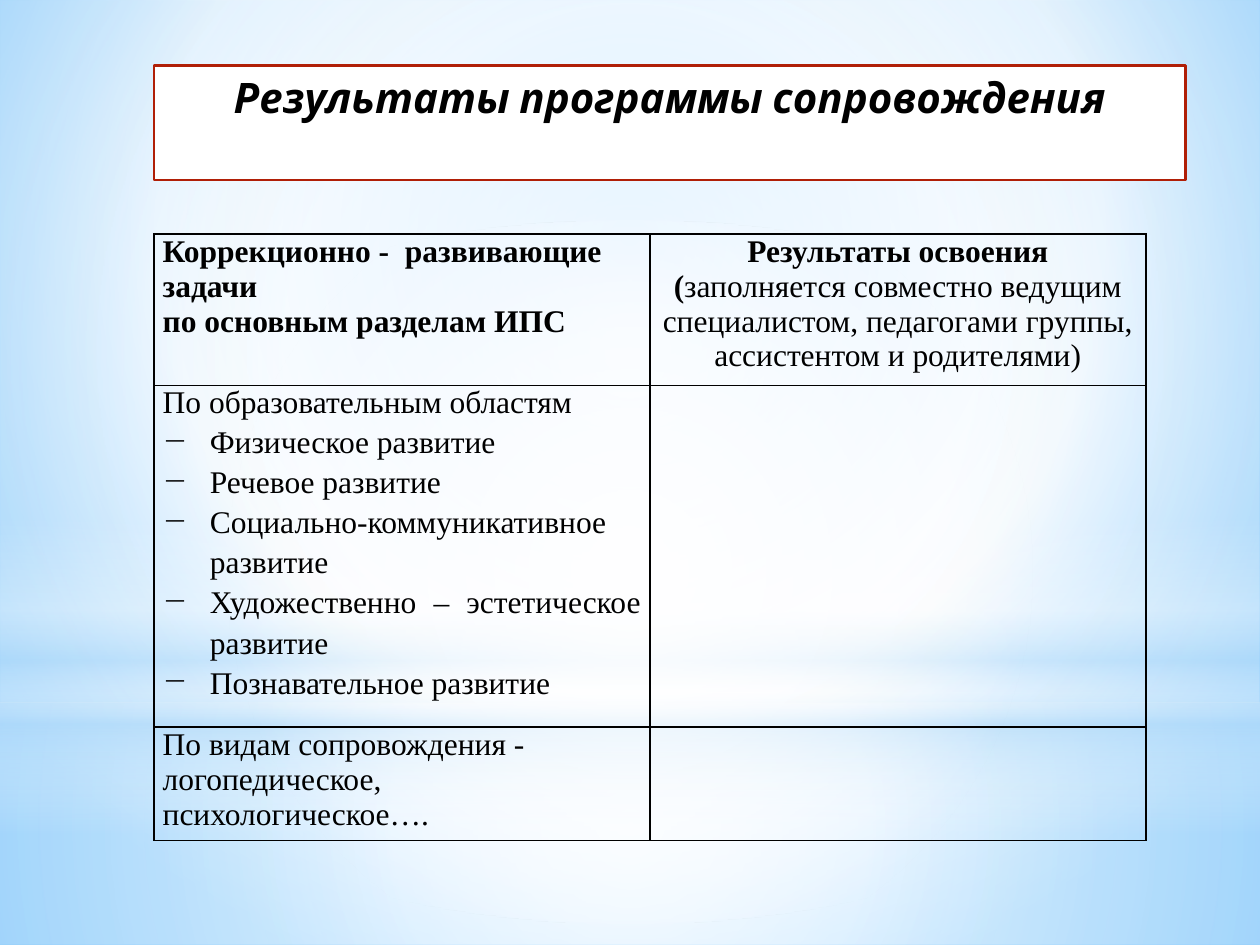
import pptx
import pptx.dml.color
import pptx.enum.shapes
import pptx.enum.text
import pptx.oxml
import pptx.oxml.ns
import pptx.util
from lxml import etree

Cm = pptx.util.Cm
Pt = pptx.util.Pt
Align = pptx.enum.text.PP_ALIGN
Shapes = pptx.enum.shapes.MSO_SHAPE

COLORS = {
    "white": "FFFFFF",
    "black": "000000",
    "red": "B01F07",
    "haze": "B4DCFA",
    "sky": "9ED5FF",
    "deep_sky": "5BB9FF",
}
TITLE_FONT = "Cabin"
TABLE_FONT = "Times New Roman"
CENTER = (50, 50, 50, 50)
AREAS = [
    "Физическое развитие",
    "Речевое развитие",
    "Социально-коммуникативное развитие",
    "Художественно – эстетическое развитие",
    "Познавательное развитие",
]


def rgb(name):
    return pptx.dml.color.RGBColor.from_string(COLORS[name])


def add_child(parent, tag, **attributes):
    child = etree.SubElement(parent, pptx.oxml.ns.qn(tag))
    for name, value in attributes.items():
        child.set(name, str(value))
    return child


def set_gradient(gradient, stops, center=None):
    """Stops are (position %, colour, opacity %); without a center it runs downwards."""
    for child in list(gradient):
        gradient.remove(child)
    stop_list = add_child(gradient, "a:gsLst")
    for position, color, opacity in stops:
        stop = add_child(stop_list, "a:gs", pos=position * 1000)
        color_element = add_child(stop, "a:srgbClr", val=COLORS[color])
        if opacity < 100:
            add_child(color_element, "a:alpha", val=opacity * 1000)
    if center:
        path = add_child(gradient, "a:path", path="circle")
        sides = {side: value * 1000 for side, value in zip("ltrb", center)}
        add_child(path, "a:fillToRect", **sides)
    else:
        add_child(gradient, "a:lin", ang=90 * 60000, scaled=0)


def add_glow(slide, kind, top, height, width, stops, center=None):
    shape = slide.shapes.add_shape(kind, 0, top, width, height)
    shape.shadow.inherit = False
    shape.line.fill.background()
    shape.fill.gradient()
    set_gradient(shape.element.xpath("./p:spPr/a:gradFill")[0], stops, center)


def add_backdrop(slide, width, height):
    slide.background.fill.gradient()
    set_gradient(
        slide.element.xpath(".//p:bg//a:gradFill")[0],
        [(0, "sky", 100), (60, "white", 100), (100, "deep_sky", 100)],
        (20, 10, 20, 60),
    )
    horizon = Cm(14.17)
    add_glow(slide, Shapes.RECTANGLE, horizon, height - horizon, width,
             [(0, "white", 91), (37, "white", 76), (100, "haze", 79)], CENTER)
    add_glow(slide, Shapes.RECTANGLE, 0, horizon, width,
             [(0, "white", 89), (48, "white", 62), (100, "haze", 79)], CENTER)
    add_glow(slide, Shapes.RECTANGLE, Cm(10.46), Cm(6.35), width,
             [(0, "white", 0), (29, "white", 30), (45, "haze", 40),
              (55, "white", 26), (65, "haze", 60), (100, "white", 0)])
    add_glow(slide, Shapes.OVAL, Cm(4.45), horizon, width,
             [(0, "white", 100), (56, "white", 0)], CENTER)


def add_title(slide, left, top, width, height):
    shape = slide.shapes.add_shape(Shapes.RECTANGLE, left, top, width, height)
    shape.shadow.inherit = False
    shape.fill.solid()
    shape.fill.fore_color.rgb = rgb("white")
    shape.line.color.rgb = rgb("red")
    shape.line.width = Pt(1.25)
    shape.text_frame.word_wrap = True
    shape.text_frame.vertical_anchor = pptx.enum.text.MSO_ANCHOR.TOP
    paragraph = shape.text_frame.paragraphs[0]
    paragraph.text = "Результаты программы сопровождения"
    paragraph.alignment = Align.CENTER
    font = paragraph.font
    font.name, font.size, font.bold, font.italic = TITLE_FONT, Pt(24), True, True
    font.color.rgb = rgb("black")


def style_cell(cell):
    cell.margin_left = cell.margin_right = Cm(0.18)
    cell.margin_top = cell.margin_bottom = 0
    cell.fill.background()
    properties = cell._tc.get_or_add_tcPr()
    for index, side in enumerate(("a:lnL", "a:lnR", "a:lnT", "a:lnB")):
        border = add_child(properties, side, w=Pt(1))
        fill = add_child(border, "a:solidFill")
        add_child(fill, "a:srgbClr", val=COLORS["black"])
        properties.insert(index, border)


def write_cell(cell, lines, bold=False, alignment=Align.LEFT):
    cell.text = "\n".join(lines)
    for paragraph in cell.text_frame.paragraphs:
        paragraph.alignment = alignment
        font = paragraph.font
        font.name, font.size, font.bold = TABLE_FONT, Pt(18), bold
        font.color.rgb = rgb("black")


def make_bullet(paragraph):
    paragraph.line_spacing = 1.15
    properties = paragraph._p.get_or_add_pPr()
    properties.set("marL", str(Cm(0.95)))
    properties.set("indent", str(-Cm(0.95)))
    bullet = add_child(properties, "a:buChar", char="−")
    properties.find(pptx.oxml.ns.qn("a:defRPr")).addprevious(bullet)


def add_results_table(slide, left, top, width, row_heights):
    frame = slide.shapes.add_table(len(row_heights), 2, left, top, width, sum(row_heights))
    table = frame.table
    table.first_row = table.horz_banding = False
    for row, height in zip(table.rows, row_heights):
        row.height = height
    for cell in table.iter_cells():
        style_cell(cell)

    write_cell(table.cell(0, 0),
               ["Коррекционно -  развивающие задачи", "по основным разделам ИПС"], bold=True)
    results = table.cell(0, 1)
    write_cell(results, ["Результаты освоения", "("], bold=True, alignment=Align.CENTER)
    note = results.text_frame.paragraphs[1].add_run()
    note.text = ("заполняется совместно ведущим специалистом, педагогами группы, "
                 "ассистентом и родителями)")
    note.font.bold = False

    areas = table.cell(1, 0)
    write_cell(areas, ["По образовательным областям"] + AREAS)
    for index, paragraph in enumerate(areas.text_frame.paragraphs[1:]):
        make_bullet(paragraph)
        if index:
            paragraph.alignment = Align.JUSTIFY
    write_cell(table.cell(2, 0),
               ["По видам сопровождения - логопедическое, психологическое…."])


def main():
    presentation = pptx.Presentation()
    presentation.slide_width = Cm(25.4)
    presentation.slide_height = Cm(19.05)
    slide = presentation.slides.add_slide(presentation.slide_layouts[6])
    add_backdrop(slide, presentation.slide_width, presentation.slide_height)
    add_title(slide, Cm(3.1), Cm(1.32), Cm(20.8), Cm(2.31))
    add_results_table(slide, Cm(3.1), Cm(4.72), Cm(20), [Cm(3.05), Cm(6.89), Cm(2.28)])
    presentation.save("out.pptx")


if __name__ == "__main__":
    main()
